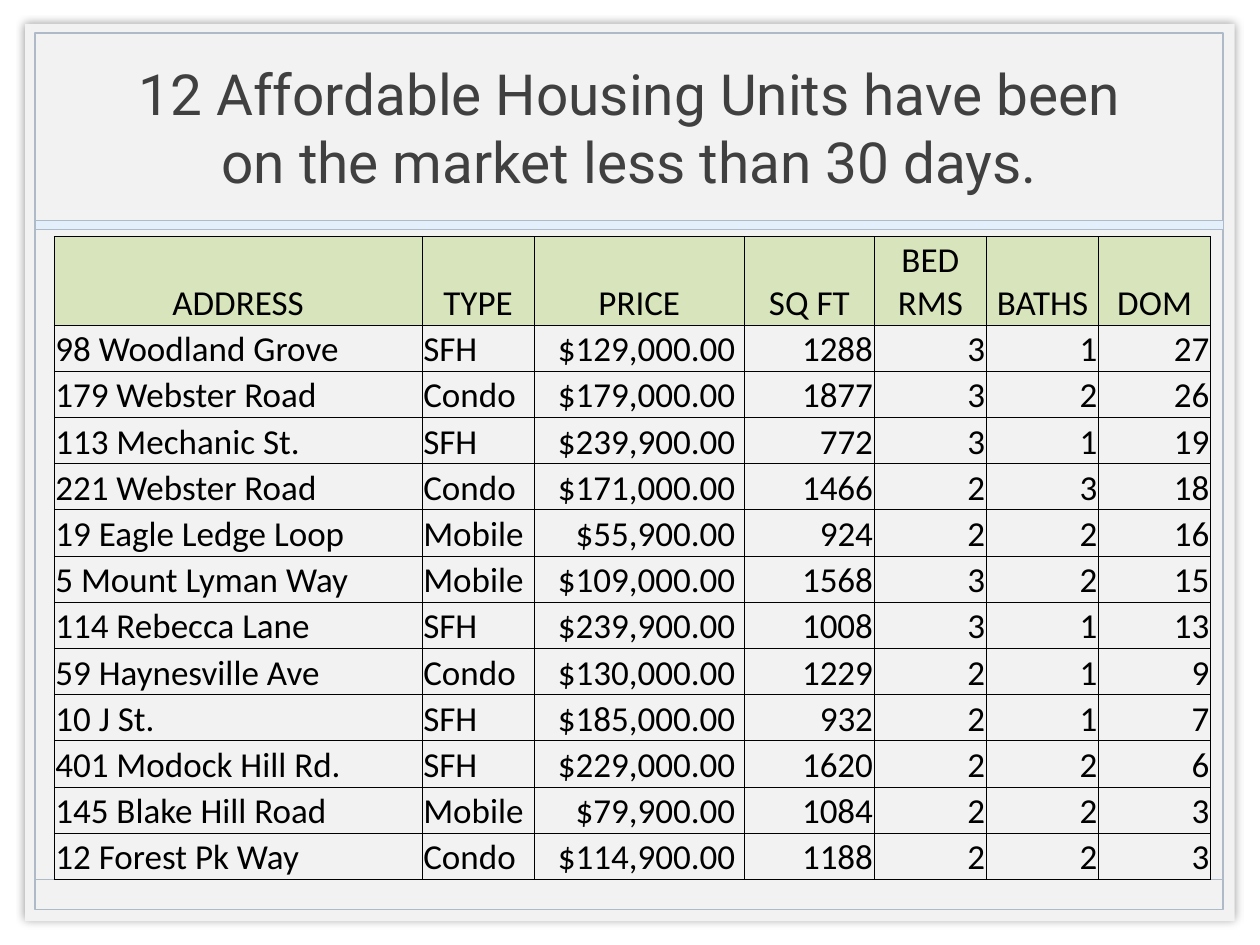
from lxml import etree
from pptx import Presentation
from pptx import util as u
from pptx.dml.color import RGBColor
from pptx.enum import shapes, text
from pptx.oxml import parse_xml
from pptx.oxml.ns import nsdecls, qn

TITLE = "12 Affordable Housing Units have been on the market less than 30 days."
HEADINGS = ["ADDRESS", "TYPE", "PRICE", "SQ FT", "BED RMS", "BATHS", "DOM"]
COLUMN_WIDTHS = [2.92, 0.89, 1.67, 1.03, 0.89, 0.89, 0.89]
HOMES = [
    ("98 Woodland Grove", "SFH", 129000, 1288, 3, 1, 27),
    ("179 Webster Road", "Condo", 179000, 1877, 3, 2, 26),
    ("113 Mechanic St.", "SFH", 239900, 772, 3, 1, 19),
    ("221 Webster Road", "Condo", 171000, 1466, 2, 3, 18),
    ("19 Eagle Ledge Loop", "Mobile", 55900, 924, 2, 2, 16),
    ("5 Mount Lyman Way", "Mobile", 109000, 1568, 3, 2, 15),
    ("114 Rebecca Lane", "SFH", 239900, 1008, 3, 1, 13),
    ("59 Haynesville Ave", "Condo", 130000, 1229, 2, 1, 9),
    ("10 J St.", "SFH", 185000, 932, 2, 1, 7),
    ("401 Modock Hill Rd.", "SFH", 229000, 1620, 2, 2, 6),
    ("145 Blake Hill Road", "Mobile", 79900, 1084, 2, 2, 3),
    ("12 Forest Pk Way", "Condo", 114900, 1188, 2, 2, 3),
]
ALIGN = text.PP_ALIGN


def color(hex_string):
    return RGBColor.from_string(hex_string)


def add_run(paragraph, words, font, size, ink):
    run = paragraph.add_run()
    run.text = words
    run.font.name = font
    run.font.size = u.Pt(size)
    run.font.color.rgb = color(ink)


def add_panel(slide, left, top, width, height, fill=None, line_width=None):
    panel = slide.shapes.add_shape(
        shapes.MSO_SHAPE.RECTANGLE,
        u.Inches(left), u.Inches(top), u.Inches(width), u.Inches(height))
    panel.shadow.inherit = False
    if fill:
        panel.fill.solid()
        panel.fill.fore_color.rgb = color(fill)
    else:
        panel.fill.background()
    if line_width:
        panel.line.color.rgb = color("AFBAC8")
        panel.line.width = u.Pt(line_width)
    else:
        panel.line.fill.background()
    return panel


def add_frame(slide, left, top, width, height):
    # Paper with a soft shadow all round
    paper = add_panel(slide, left, top, width, height, fill="F2F2F2")
    effects = paper._element.spPr.find(qn("a:effectLst"))
    effects.append(parse_xml(
        f'<a:outerShdw {nsdecls("a")} blurRad="{u.Pt(5)}" dist="0" dir="0">'
        '<a:srgbClr val="000000"><a:alpha val="40000"/></a:srgbClr></a:outerShdw>'))

    # Inner border, footer rule and band under the title
    inner_left, inner_width = left + 0.08, width - 0.17
    add_panel(slide, inner_left, top + 0.07, inner_width, height - 0.16, line_width=1)
    rule_y = u.Inches(top + 6.79)
    rule = slide.shapes.add_connector(
        shapes.MSO_CONNECTOR.STRAIGHT,
        u.Inches(inner_left), rule_y, u.Inches(inner_left + inner_width), rule_y)
    rule.line.color.rgb = color("AFBAC8")
    rule.line.width = u.Pt(1)
    etree.SubElement(rule._element.spPr, qn("a:effectLst"))
    add_panel(slide, inner_left, top + 1.56, inner_width, 0.07,
              fill="E4EFFC", line_width=0.25)


def place_title(slide, left, top, width, height):
    title = slide.shapes.title
    slide.shapes._spTree.append(title._element)  # in front of the frame
    title.left, title.top = u.Inches(left), u.Inches(top)
    title.width, title.height = u.Inches(width), u.Inches(height)
    frame = title.text_frame
    frame.word_wrap = True
    frame.auto_size = text.MSO_AUTO_SIZE.NONE
    frame.vertical_anchor = text.MSO_ANCHOR.MIDDLE
    heading = frame.paragraphs[0]
    heading.alignment = ALIGN.CENTER
    add_run(heading, TITLE, "Roboto", 32.4, "404040")


def add_borders(cell):
    properties = cell._tc.get_or_add_tcPr()
    for side in ("lnL", "lnR", "lnT", "lnB"):
        properties.append(parse_xml(
            f'<a:{side} {nsdecls("a")} w="{u.Pt(0.5)}"><a:solidFill>'
            f'<a:srgbClr val="000000"/></a:solidFill></a:{side}>'))


def fill_cell(cell, words, alignment, fill=None):
    add_borders(cell)
    if fill:
        cell.fill.solid()
        cell.fill.fore_color.rgb = color(fill)
    else:
        cell.fill.background()
    cell.margin_left = cell.margin_right = cell.margin_top = u.Inches(0.01)
    cell.margin_bottom = 0
    cell.vertical_anchor = text.MSO_ANCHOR.BOTTOM
    paragraph = cell.text_frame.paragraphs[0]
    paragraph.alignment = alignment
    add_run(paragraph, words, "Calibri", 20, "000000")


def add_homes_table(slide, left, top, width, height, header_height=0.7):
    homes = slide.shapes.add_table(
        len(HOMES) + 1, len(HEADINGS),
        u.Inches(left), u.Inches(top), u.Inches(width), u.Inches(height)).table
    homes.horz_banding = False
    for column, column_width in zip(homes.columns, COLUMN_WIDTHS):
        column.width = u.Inches(column_width)
    for row in homes.rows:
        row.height = u.Inches((height - header_height) / len(HOMES))
    homes.rows[0].height = u.Inches(header_height)

    # Header row, then one row per home
    for c, heading in enumerate(HEADINGS):
        fill_cell(homes.cell(0, c), heading, ALIGN.CENTER, fill="D8E4BC")
    for r, home in enumerate(HOMES, start=1):
        for c, value in enumerate(home):
            words = f" ${value:,.2f} " if HEADINGS[c] == "PRICE" else str(value)
            alignment = ALIGN.LEFT if isinstance(value, str) else ALIGN.RIGHT
            fill_cell(homes.cell(r, c), words, alignment)


def main():
    deck = Presentation()
    deck.slide_width, deck.slide_height = u.Inches(10), u.Inches(7.5)
    slide = deck.slides.add_slide(deck.slide_layouts[5])
    slide.background.fill.solid()
    slide.background.fill.fore_color.rgb = color("FFFFFF")
    add_frame(slide, 0.2, 0.19, 9.6, 7.12)
    place_title(slide, 0.98, 0.27, 8.03, 1.47)
    add_homes_table(slide, 0.43, 1.88, sum(COLUMN_WIDTHS), 5.1)
    deck.save("out.pptx")


if __name__ == "__main__":
    main()
